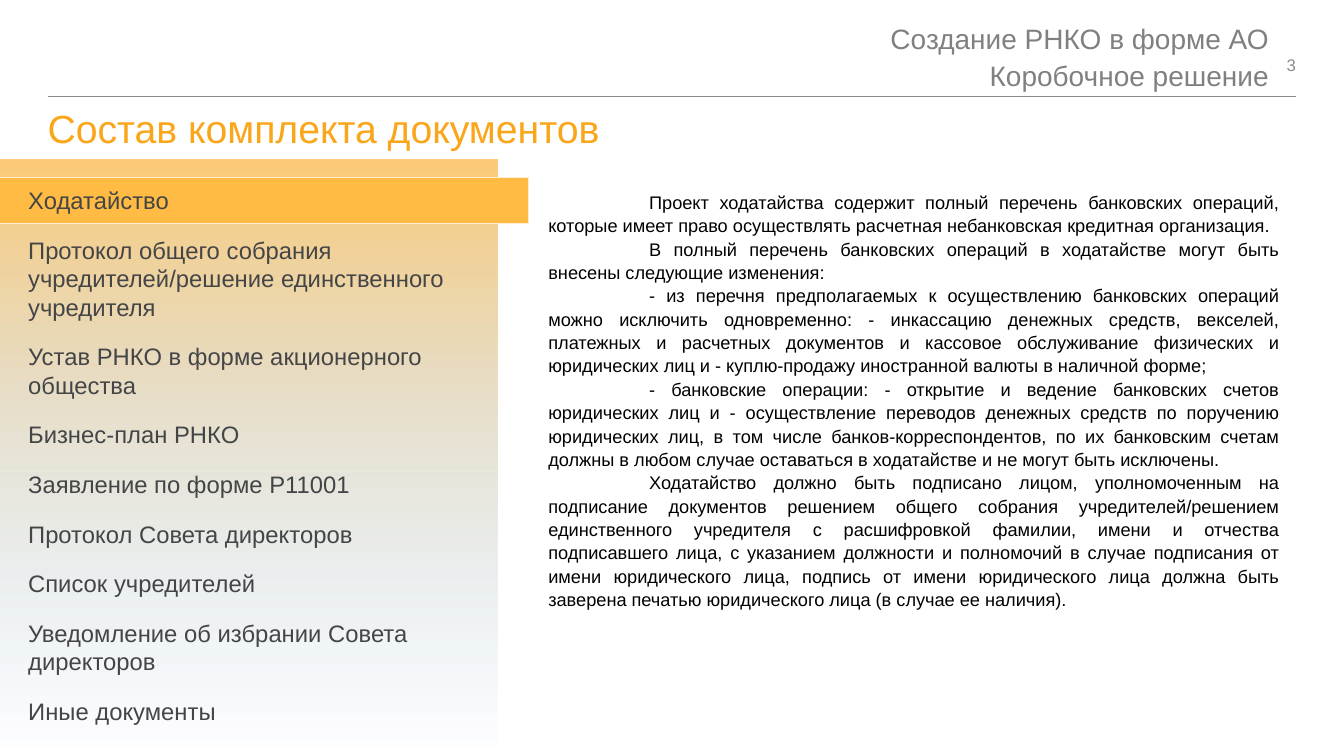
from lxml.etree import SubElement
from pptx import Presentation
from pptx.dml.color import RGBColor
from pptx.enum.shapes import MSO_CONNECTOR, MSO_SHAPE
from pptx.enum.text import MSO_ANCHOR, PP_ALIGN
from pptx.oxml.ns import qn
from pptx.util import Cm, Pt

COLORS = {
    "rule": "888A8D", "title": "FAA61A", "number": "8C8C8C", "head": "808080",
    "top": "FCCA76", "fade": "A4C8E8", "bar": "FFBB44", "edge": "FFEECE",
    "item": "444547", "body": "000000",
}

ITEMS = [
    "Ходатайство",
    "Протокол общего собрания учредителей/решение единственного учредителя",
    "Устав РНКО в форме акционерного общества",
    "Бизнес-план РНКО",
    "Заявление по форме Р11001",
    "Протокол Совета директоров",
    "Список учредителей",
    "Уведомление об избрании Совета директоров",
    "Иные документы",
]

BODY = [
    "Проект ходатайства содержит полный перечень банковских операций, которые имеет "
    "право осуществлять расчетная небанковская кредитная организация.",
    "В полный перечень банковских операций в ходатайстве могут быть внесены следующие "
    "изменения:",
    "- из перечня предполагаемых к осуществлению банковских операций можно исключить "
    "одновременно: - инкассацию денежных средств, векселей, платежных и расчетных "
    "документов и кассовое обслуживание физических и юридических лиц и - куплю-продажу "
    "иностранной валюты в наличной форме;",
    "- банковские операции: - открытие и ведение банковских счетов юридических лиц и - "
    "осуществление переводов денежных средств по поручению юридических лиц, в том числе "
    "банков-корреспондентов, по их банковским счетам должны в любом случае оставаться в "
    "ходатайстве и не могут быть исключены.",
    "Ходатайство должно быть подписано лицом, уполномоченным на подписание документов "
    "решением общего собрания учредителей/решением единственного учредителя с "
    "расшифровкой фамилии, имени и отчества подписавшего лица, с указанием должности и "
    "полномочий в случае подписания от имени юридического лица, подпись от имени "
    "юридического лица должна быть заверена печатью юридического лица (в случае ее "
    "наличия).",
]


def tint(name):
    return RGBColor.from_string(COLORS[name])


def add_text(slide, box, lines, size, color, align=PP_ALIGN.LEFT, space=1.0, after=0,
             left=0, first=0, pad=(0, 0), anchor=MSO_ANCHOR.TOP):
    frame = slide.shapes.add_textbox(*map(Cm, box)).text_frame
    frame.word_wrap = True
    frame.vertical_anchor = anchor
    frame.margin_left = frame.margin_right = Cm(pad[0])
    frame.margin_top = frame.margin_bottom = Cm(pad[1])
    for i, line in enumerate(lines):
        para = frame.paragraphs[0] if i == 0 else frame.add_paragraph()
        para.alignment = align
        para.line_spacing = space
        para.space_after = Pt(after)
        if left or first:
            props = para._p.get_or_add_pPr()
            props.set("marL", str(Cm(left)))
            props.set("indent", str(Cm(first)))
        run = para.add_run()
        run.text = line
        run.font.name = "Arial"
        run.font.size = Pt(size)
        run.font.color.rgb = tint(color)


def add_rect(slide, box):
    rect = slide.shapes.add_shape(MSO_SHAPE.RECTANGLE, *map(Cm, box))
    rect.shadow.inherit = False
    return rect


def add_panel(slide, box):
    panel = add_rect(slide, box)
    panel.line.fill.background()
    panel.fill.gradient()
    panel.fill.gradient_angle = 270
    stops = panel.fill.gradient_stops
    for stop, name, place in zip(stops, ("top", "fade"), (0, 0.99)):
        stop.color.rgb = tint(name)
        stop.position = place
    # The lower end is fully transparent
    last = list(panel.element.spPr.iter(qn("a:srgbClr")))[-1]
    SubElement(last, qn("a:alpha"), val="0")


def add_bar(slide, box):
    bar = add_rect(slide, box)
    bar.fill.solid()
    bar.fill.fore_color.rgb = tint("bar")
    bar.line.color.rgb = tint("edge")
    bar.line.width = Pt(1)


def add_rule(slide, left, right, top):
    rule = slide.shapes.add_connector(
        MSO_CONNECTOR.STRAIGHT, Cm(left), Cm(top), Cm(right), Cm(top))
    rule.line.color.rgb = tint("rule")
    rule.line.width = Pt(0.5)
    SubElement(rule._element.spPr, qn("a:effectLst"))


def main():
    deck = Presentation()
    deck.slide_width, deck.slide_height = Cm(33.87), Cm(19.05)
    slide = deck.slides.add_slide(deck.slide_layouts[6])

    # Header
    add_rule(slide, 1.2, 32.66, 2.42)
    add_text(slide, (1.2, 2.77, 31.46, 1.68), ["Состав комплекта документов"],
             28, "title", space=0.9)
    add_text(slide, (30.6, 1.2, 2.06, 0.88), ["3"], 12, "number",
             align=PP_ALIGN.RIGHT, anchor=MSO_ANCHOR.MIDDLE)
    add_text(slide, (12, 0.46, 19.98, 1.68),
             ["Создание РНКО в форме АО", "Коробочное решение"],
             20, "head", align=PP_ALIGN.RIGHT, space=1.1)

    # Document list with its current item
    add_panel(slide, (0, 4.03, 12.54, 15.02))
    add_bar(slide, (-0.03, 4.48, 13.35, 1.16))
    add_text(slide, (0.46, 4.55, 11.5, 13.97), ITEMS, 17, "item",
             after=15, pad=(0.25, 0.13))

    # Explanation
    add_text(slide, (12.3, 4.65, 20.17, 10.95), BODY, 13, "body",
             align=PP_ALIGN.JUSTIFY, space=1.07, left=1.27, first=2.54,
             pad=(0.25, 0.13))

    deck.save("out.pptx")


if __name__ == "__main__":
    main()
